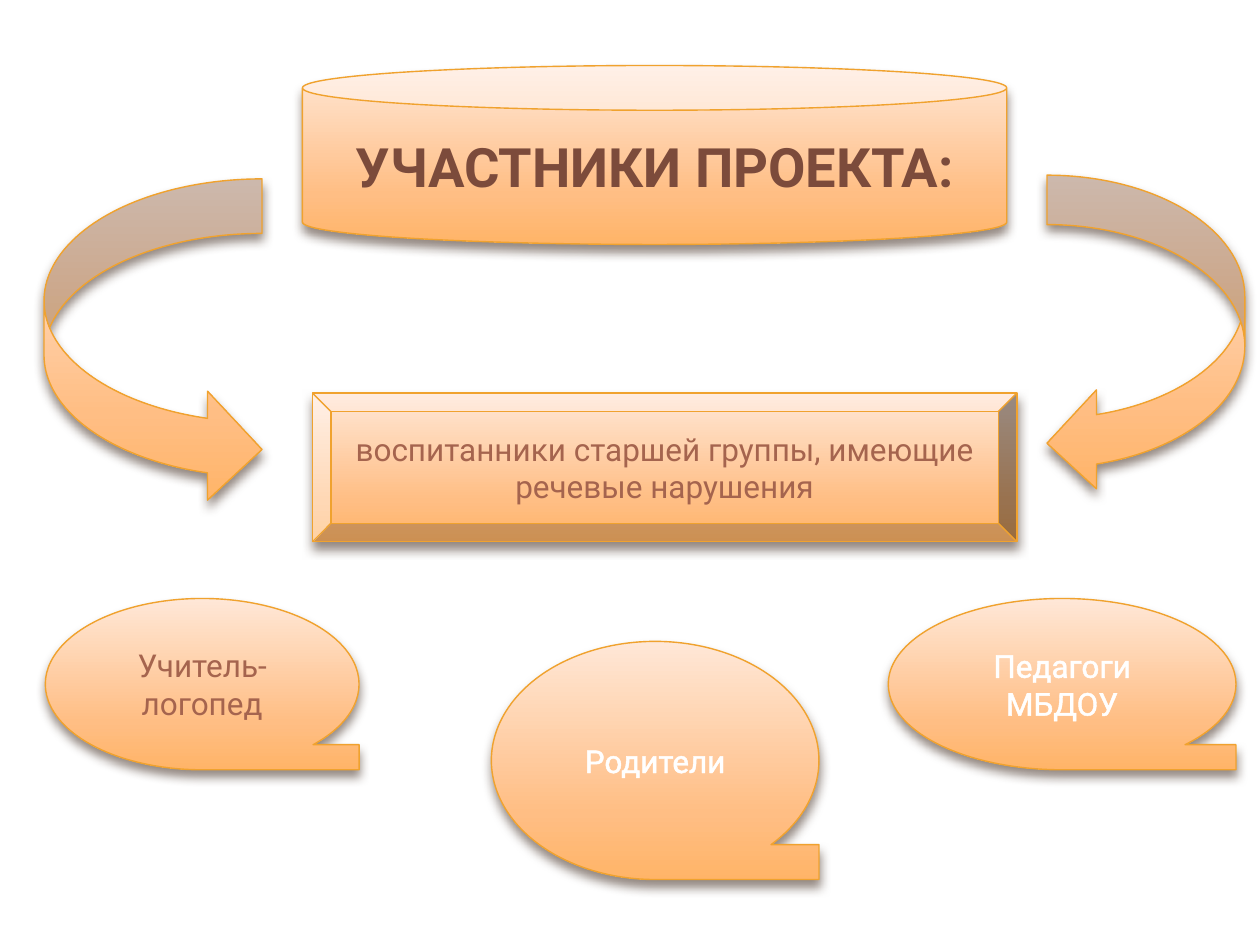
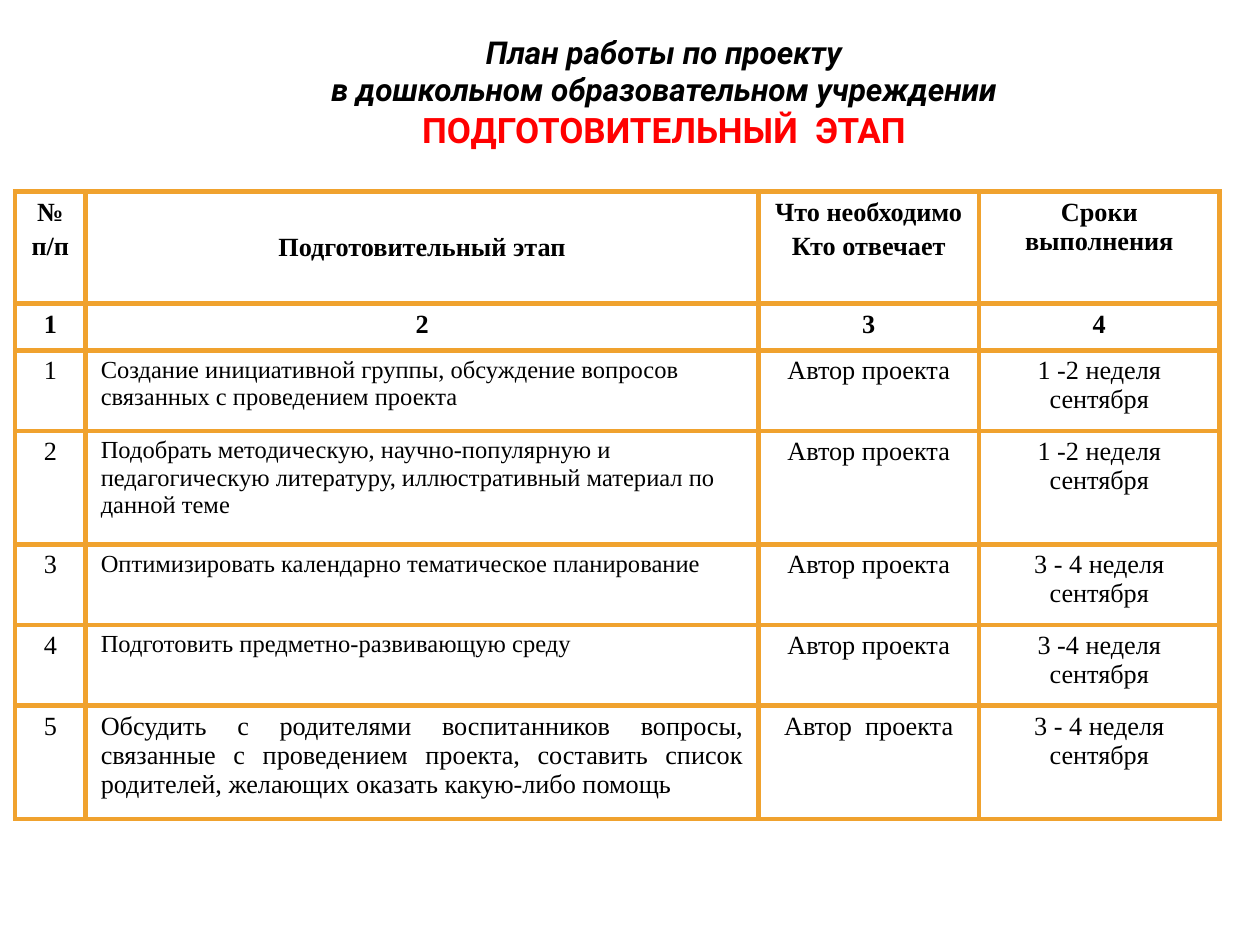
from collections import namedtuple
from copy import deepcopy

from lxml.etree import SubElement
from pptx import Presentation
from pptx.dml.color import RGBColor
from pptx.enum.shapes import MSO_SHAPE
from pptx.enum.text import MSO_ANCHOR, PP_ALIGN
from pptx.oxml.ns import qn
from pptx.util import Emu, Inches, Pt

COLUMNS, ROWS = 100, 75
CELL = Inches(0.1)
AMBER, SHADOW, WHITE, BLACK = "F0A22E", "4E3B30", "FFFFFF", "000000"
BROWN, DARK_BROWN, RED = "A5644E", "7C4B3B", "FF0000"
PEACH_STOPS = [(0, "FFE7D7"), (0.72, "FFBE84"), (1, "FFB468")]
SHAPE_INSETS = {"margin_left": Inches(0.11), "margin_right": Inches(0.11),
                "margin_top": Inches(0.05), "margin_bottom": Inches(0.05)}
CELL_INSETS = {**SHAPE_INSETS, "margin_left": Inches(0.12), "margin_right": Inches(0.12)}
HEADING = {"name": "Roboto", "size": Pt(31), "bold": True}
LABEL = {"name": "Roboto", "size": Pt(18), "bold": False}
PLAN_TITLE = {"name": "Roboto", "size": Pt(18), "bold": True, "italic": True}
STAGE_TITLE = {**PLAN_TITLE, "size": Pt(20), "italic": False}
CELL_TEXT = {"name": "Times New Roman", "size": Pt(15), "bold": False}
CELL_HEAD = {**CELL_TEXT, "bold": True}
TASK_TEXT = {**CELL_TEXT, "size": Pt(14)}

COLUMN_WIDTHS = [5.6, 53.4, 17.5, 19.1]
ROW_HEIGHTS = [8.9, 3.7, 6.4, 9, 6.4, 6.4, 9]
PLAN = [
    ["№\nп/п", "Подготовительный этап", "Что необходимо\nКто отвечает", "Сроки выполнения"],
    ["1", "2", "3", "4"],
    ["1", "Создание инициативной группы, обсуждение вопросов связанных с проведением проекта",
     "Автор проекта", "1 -2 неделя сентября"],
    ["2", "Подобрать методическую, научно-популярную и педагогическую литературу, "
     "иллюстративный материал по данной теме", "Автор проекта", "1 -2 неделя сентября"],
    ["3", "Оптимизировать календарно тематическое планирование",
     "Автор проекта", "3 - 4 неделя сентября"],
    ["4", "Подготовить предметно-развивающую среду", "Автор проекта", "3 -4 неделя сентября"],
    ["5", "Обсудить с родителями воспитанников вопросы, связанные с проведением проекта, "
     "составить список родителей, желающих оказать какую-либо помощь",
     "Автор  проекта", "3 - 4 неделя сентября"],
]


class Box(namedtuple("Box", "left top width height")):
    def inner(self, left, top, width, height):
        return Box(self.left + left, self.top + top, width, height)

    def lengths(self):
        return [grid(value) for value in self]


def grid(count):
    return Emu(round(count * CELL))


def color(value):
    return RGBColor.from_string(value)


def apply(target, values):
    for name, value in values.items():
        setattr(target, name, value)


def add_solid(parent, value):
    SubElement(SubElement(parent, qn("a:solidFill")), qn("a:srgbClr"), val=value)


def write(para, text, font, ink, align=PP_ALIGN.CENTER):
    para.alignment = align
    span = para.add_run()
    span.text = text
    apply(span.font, font)
    span.font.color.rgb = color(ink)
    return span


def outline(span):
    properties = span._r.get_or_add_rPr()
    line = SubElement(properties, qn("a:ln"), w=str(Pt(1.45)))
    add_solid(line, WHITE)
    properties.insert(0, line)


def fill_peach(shape):
    shape.fill.gradient()
    shape.fill.gradient_angle = 270
    stops = shape._element.spPr.find(".//" + qn("a:gsLst"))
    stops.append(deepcopy(stops[-1]))
    for stop, (position, value) in zip(shape.fill.gradient_stops, PEACH_STOPS):
        stop.color.rgb = color(value)
        stop.position = position


def cast_shadow(shape):
    shape.shadow.inherit = False
    effects = shape._element.spPr.find(qn("a:effectLst"))
    shadow = SubElement(effects, qn("a:outerShdw"), blurRad=str(Pt(6)), dist=str(Pt(4)),
                        dir="5400000", algn="ctr", rotWithShape="0")
    tint = SubElement(shadow, qn("a:srgbClr"), val=SHADOW)
    SubElement(tint, qn("a:alpha"), val="60000")


def add_peach(page, kind, box):
    shape = page.shapes.add_shape(kind, *box.lengths())
    fill_peach(shape)
    shape.line.color.rgb = color(AMBER)
    shape.line.width = Pt(0.79)
    cast_shadow(shape)
    return shape


def add_peach_text(page, kind, box, text, font, ink):
    frame = add_peach(page, kind, box).text_frame
    apply(frame, {**SHAPE_INSETS, "word_wrap": True, "vertical_anchor": MSO_ANCHOR.MIDDLE})
    return write(frame.paragraphs[0], text, font, ink)


def add_participants(page, box):
    add_peach_text(page, MSO_SHAPE.CAN, box.inner(20.5, 0, 55.9, 14.2),
                   "УЧАСТНИКИ ПРОЕКТА:", HEADING, DARK_BROWN)
    outline(add_peach_text(page, MSO_SHAPE.BEVEL, box.inner(21.3, 26, 55.9, 11.8),
                           "воспитанники старшей группы, имеющие речевые нарушения",
                           LABEL, BROWN))
    add_peach(page, MSO_SHAPE.CURVED_LEFT_ARROW, box.inner(79.6, 8.7, 15.7, 25.2))
    add_peach(page, MSO_SHAPE.CURVED_RIGHT_ARROW, box.inner(0, 9, 17.3, 25.8))


def add_adults(page, box):
    adults = [("Родители", WHITE, (35.4, 3.4, 26, 18.9)),
              ("Учитель-логопед", BROWN, (0, 0, 24.9, 13.6)),
              ("Педагоги МБДОУ", WHITE, (66.9, 0, 27.6, 13.6))]
    for text, ink, place in adults:
        outline(add_peach_text(page, MSO_SHAPE.FLOWCHART_SEQUENTIAL_ACCESS_STORAGE,
                               box.inner(*place), text, LABEL, ink))


def add_plan_title(page, box):
    frame = page.shapes.add_textbox(*box.lengths()).text_frame
    frame.word_wrap = True
    lines = [("План работы по проекту", PLAN_TITLE, BLACK),
             ("в дошкольном образовательном учреждении", PLAN_TITLE, BLACK),
             ("ПОДГОТОВИТЕЛЬНЫЙ  ЭТАП", STAGE_TITLE, RED)]
    for index, line in enumerate(lines):
        write(frame.add_paragraph() if index else frame.paragraphs[0], *line)


def add_borders(cell):
    properties = cell._tc.get_or_add_tcPr()
    for index, side in enumerate(("a:lnL", "a:lnR", "a:lnT", "a:lnB")):
        line = SubElement(properties, qn(side), w=str(Pt(3)))
        add_solid(line, AMBER)
        properties.insert(index, line)


def cell_format(row, column):
    if row < 2:
        return CELL_HEAD, PP_ALIGN.CENTER
    if column != 1:
        return CELL_TEXT, PP_ALIGN.CENTER
    if row == len(PLAN) - 1:
        return CELL_TEXT, PP_ALIGN.JUSTIFY
    return TASK_TEXT, PP_ALIGN.LEFT


def fill_cell(cell, text, font, align):
    apply(cell, CELL_INSETS)
    cell.fill.background()
    add_borders(cell)
    for index, line in enumerate(text.split("\n")):
        frame = cell.text_frame
        para = frame.add_paragraph() if index else frame.paragraphs[0]
        para.space_before = Pt(3)
        write(para, line, font, BLACK, align)


def add_plan_table(page, box):
    table = page.shapes.add_table(len(PLAN), len(COLUMN_WIDTHS), *box.lengths()).table
    apply(table, {"first_row": False, "horz_banding": False})
    for column, width in zip(table.columns, COLUMN_WIDTHS):
        column.width = grid(width)
    for row, height in zip(table.rows, ROW_HEIGHTS):
        row.height = grid(height)
    for row, texts in enumerate(PLAN):
        for column, text in enumerate(texts):
            fill_cell(table.cell(row, column), text, *cell_format(row, column))
    table.cell(0, 1).vertical_anchor = MSO_ANCHOR.MIDDLE


def main():
    deck = Presentation()
    apply(deck, {"slide_width": grid(COLUMNS), "slide_height": grid(ROWS)})
    blank = deck.slide_layouts[6]

    page = deck.slides.add_slide(blank)
    add_participants(page, Box(3.5, 5.2, 95.3, 37.8))
    add_adults(page, Box(3.6, 47.5, 94.5, 22.3))

    page = deck.slides.add_slide(blank)
    add_plan_title(page, Box(10.5, 2.1, 84.4, 12.5))
    add_plan_table(page, Box(1.2, 15.2, sum(COLUMN_WIDTHS), sum(ROW_HEIGHTS)))

    deck.save("out.pptx")


if __name__ == "__main__":
    main()
